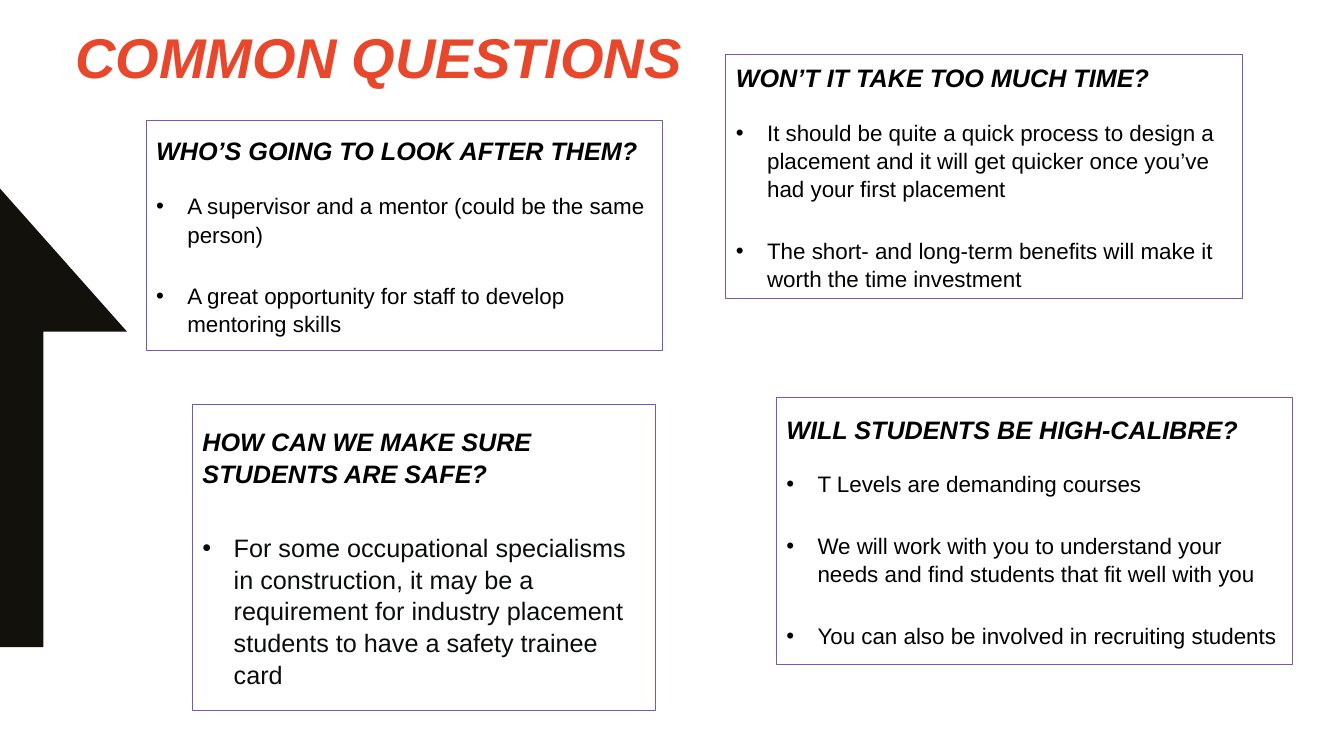
from lxml.etree import SubElement
from pptx import Presentation
from pptx.dml.color import RGBColor
from pptx.enum.shapes import MSO_SHAPE
from pptx.enum.text import MSO_ANCHOR, PP_ALIGN
from pptx.oxml.ns import qn
from pptx.util import Inches, Pt

COLORS = {
    "title": "E8472B",
    "text": "000000",
    "safety": "0B0C0C",
    "border": "765AB0",
    "arrow": "12110C",
}
INDENT = Inches(0.31)


def add_text(tf, text, size, color="text", bold=False, bullet=False,
             before=0, after=0, spacing=1.0):
    """Write one paragraph, using the frame's empty first one if it is free."""
    first = not tf.paragraphs[0].runs
    p = tf.paragraphs[0] if first else tf.add_paragraph()
    p.alignment = PP_ALIGN.LEFT
    p.line_spacing = spacing
    p.space_before = Pt(0 if first else before)
    p.space_after = Pt(after)
    if bullet:
        pPr = p._p.get_or_add_pPr()
        pPr.set("marL", str(INDENT))
        pPr.set("indent", str(-INDENT))
        SubElement(pPr, qn("a:buFont")).set("typeface", "Arial")
        SubElement(pPr, qn("a:buChar")).set("char", "•")
    r = p.add_run()
    r.text = text
    r.font.name = "Arial"
    r.font.size = Pt(size)
    r.font.bold = r.font.italic = bold
    r.font.color.rgb = RGBColor.from_string(COLORS[color])


prs = Presentation()
prs.slide_width, prs.slide_height = Inches(13.33), Inches(7.5)
s = prs.slides.add_slide(prs.slide_layouts[6])

# Arrow at the left edge
arrow_points = [(1.26, 3.29), (0.43, 3.29), (0.43, 6.42), (0, 6.42)]
builder = s.shapes.build_freeform(0, Inches(1.87), scale=1.0)
builder.add_line_segments([(Inches(x), Inches(y)) for x, y in arrow_points])
arrow = builder.convert_to_shape()
arrow.shadow.inherit = False
arrow.fill.solid()
arrow.fill.fore_color.rgb = RGBColor.from_string(COLORS["arrow"])
arrow.line.fill.background()

# Title
title = s.shapes.add_textbox(Inches(0.65), Inches(0.17), Inches(6.6), Inches(0.77))
title.text_frame.word_wrap = True
add_text(title.text_frame, "COMMON QUESTIONS", 40, "title", bold=True)

# Question boxes: position, heading, bullets, bullet format
usual = dict(size=16, before=12, after=12)
safety = dict(size=18, before=24, after=6, color="safety")
questions = [
    ((1.45, 1.2, 5.12, 2.28), "WHO’S GOING TO LOOK AFTER THEM?", [
        "A supervisor and a mentor (could be the same person)",
        "A great opportunity for staff to develop mentoring skills",
    ], usual),
    ((7.2, 0.54, 5.12, 2.42), "WON’T IT TAKE TOO MUCH TIME?", [
        "It should be quite a quick process to design a placement and it will "
        "get quicker once you’ve had your first placement",
        "The short- and long-term benefits will make it worth the time investment",
    ], usual),
    ((7.7, 3.94, 5.12, 2.65), "WILL STUDENTS BE HIGH-CALIBRE?", [
        "T Levels are demanding courses",
        "We will work with you to understand your needs and find students "
        "that fit well with you",
        "You can also be involved in recruiting students",
    ], usual),
    ((1.91, 4.01, 4.59, 3.04), "HOW CAN WE MAKE SURE STUDENTS ARE SAFE?", [
        "For some occupational specialisms in construction, it may be a "
        "requirement for industry placement students to have a safety trainee card",
    ], safety),
]
for place, heading, bullets, style in questions:
    sp = s.shapes.add_shape(MSO_SHAPE.RECTANGLE, *map(Inches, place))
    sp.shadow.inherit = False
    sp.fill.background()
    sp.line.color.rgb = RGBColor.from_string(COLORS["border"])
    sp.line.width = Pt(0.75)
    tf = sp.text_frame
    tf.word_wrap = True
    tf.vertical_anchor = MSO_ANCHOR.MIDDLE
    add_text(tf, heading, 18, bold=True, after=6, spacing=1.05)
    for bullet in bullets:
        add_text(tf, bullet, bullet=True, spacing=1.05, **style)

prs.save("out.pptx")
